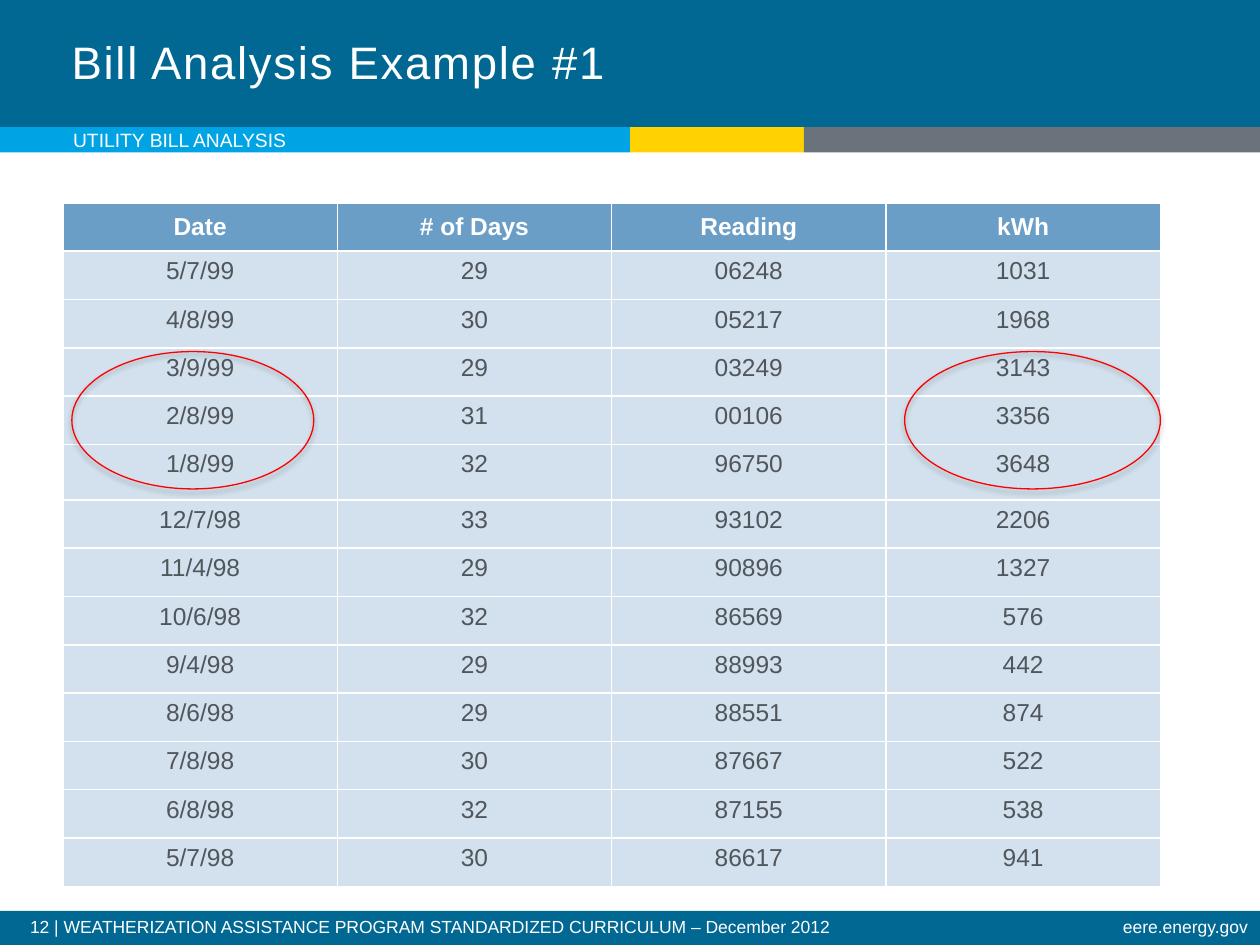
from dataclasses import dataclass

from lxml import etree
from pptx import Presentation
from pptx.dml.color import RGBColor
from pptx.enum.shapes import MSO_SHAPE
from pptx.enum.text import MSO_ANCHOR, PP_ALIGN
from pptx.oxml.ns import qn
from pptx.util import Inches, Pt

RECT, OVAL = MSO_SHAPE.RECTANGLE, MSO_SHAPE.OVAL
LEFT, CENTER, RIGHT = PP_ALIGN.LEFT, PP_ALIGN.CENTER, PP_ALIGN.RIGHT
TOP, MIDDLE = MSO_ANCHOR.TOP, MSO_ANCHOR.MIDDLE


@dataclass(frozen=True)
class Theme:
    font: str = "Arial"
    white: str = "FFFFFF"
    navy: str = "006892"
    sky: str = "00A4E4"
    yellow: str = "FFD200"
    gray: str = "6A737B"
    table: str = "6B9EC6"
    body: str = "50565C"
    mark: str = "FF0000"
    title_size: int = 26
    table_size: int = 14
    section_size: int = 11
    footer_size: int = 10


THEME = Theme()

HEADERS = ("Date", "# of Days", "Reading", "kWh")
BILLS = (
    ("5/7/99", "29", "06248", "1031"),
    ("4/8/99", "30", "05217", "1968"),
    ("3/9/99", "29", "03249", "3143"),
    ("2/8/99", "31", "00106", "3356"),
    ("1/8/99", "32", "96750", "3648"),
    ("12/7/98", "33", "93102", "2206"),
    ("11/4/98", "29", "90896", "1327"),
    ("10/6/98", "32", "86569", "576"),
    ("9/4/98", "29", "88993", "442"),
    ("8/6/98", "29", "88551", "874"),
    ("7/8/98", "30", "87667", "522"),
    ("6/8/98", "32", "87155", "538"),
    ("5/7/98", "30", "86617", "941"),
)
TALL_ROW, TALL_HEIGHT = 5, 0.44


def rgb(color):
    return RGBColor.from_string(color)


def add_child(parent, tag, **attributes):
    return etree.SubElement(parent, qn(tag), attributes)


def add_solid_color(parent, color, alpha=None):
    clr = add_child(parent, "a:srgbClr", val=color)
    if alpha is not None:
        add_child(clr, "a:alpha", val=str(alpha * 1000))


def add_run(p, text, size, color, bold=False):
    r = p.add_run()
    r.text = text
    r.font.name = THEME.font
    r.font.size = Pt(size)
    r.font.bold = bold
    r.font.color.rgb = rgb(color)
    return r


def add_bar(s, x, y, w, h, color):
    sp = s.shapes.add_shape(RECT, Inches(x), Inches(y), Inches(w), Inches(h))
    sp.shadow.inherit = False
    sp.fill.solid()
    sp.fill.fore_color.rgb = rgb(color)
    sp.line.fill.background()


def add_text(s, x, y, w, h, text, size, align=LEFT, anchor=TOP,
             spacing=None, inset=True, tracking=0):
    """Add one line of white text; tracking is in points."""
    tf = s.shapes.add_textbox(Inches(x), Inches(y), Inches(w), Inches(h)).text_frame
    tf.word_wrap = True
    tf.vertical_anchor = anchor
    if not inset:
        tf.margin_left = tf.margin_right = tf.margin_top = tf.margin_bottom = 0
    p = tf.paragraphs[0]
    p.alignment = align
    p.line_spacing = spacing
    r = add_run(p, text, size, THEME.white)
    if tracking:
        r.font._element.set("spc", str(tracking * 100))


def add_borders(cell, color, width):
    tc_pr = cell._tc.get_or_add_tcPr()
    for side in "LRTB":
        ln = add_child(tc_pr, f"a:ln{side}", w=str(Pt(width)))
        add_solid_color(add_child(ln, "a:solidFill"), color)


def fill_cell(cell, text, is_header):
    add_borders(cell, THEME.white, 1)
    cell.fill.solid()
    cell.fill.fore_color.rgb = rgb(THEME.table)
    if not is_header:
        clr = cell._tc.tcPr.find(qn("a:solidFill")).find(qn("a:srgbClr"))
        add_child(clr, "a:alpha", val="30000")
    cell.vertical_anchor = MIDDLE if is_header else TOP
    p = cell.text_frame.paragraphs[0]
    p.alignment = CENTER
    add_run(p, text, THEME.table_size, THEME.white if is_header else THEME.body, is_header)


def add_bill_table(s, x, y, w, h):
    rows = (HEADERS, *BILLS)
    table = s.shapes.add_table(len(rows), len(HEADERS), Inches(x), Inches(y),
                               Inches(w), Inches(h)).table
    for column in table.columns:
        column.width = Inches(w / len(HEADERS))
    row_height = (h - TALL_HEIGHT) / (len(rows) - 1)
    for i, values in enumerate(rows):
        table.rows[i].height = Inches(TALL_HEIGHT if i == TALL_ROW else row_height)
        for j, text in enumerate(values):
            fill_cell(table.cell(i, j), text, is_header=i == 0)


def add_highlight(s, x, y, w, h):
    """Add a red ring with a soft shadow below it."""
    sp = s.shapes.add_shape(OVAL, Inches(x), Inches(y), Inches(w), Inches(h))
    sp.fill.background()
    sp.line.color.rgb = rgb(THEME.mark)
    sp.line.width = Pt(0.75)
    sp.shadow.inherit = False
    effects = sp._element.spPr.find(qn("a:effectLst"))
    shadow = add_child(effects, "a:outerShdw", blurRad=str(Pt(3.1)), dist=str(Pt(1.8)),
                       dir=str(90 * 60000), rotWithShape="0")
    add_solid_color(shadow, "000000", alpha=35)


def main():
    prs = Presentation()
    prs.slide_width, prs.slide_height = Inches(10), Inches(7.5)
    s = prs.slides.add_slide(prs.slide_layouts[6])

    add_bar(s, 0, 0, 10, 1.01, THEME.navy)
    add_bar(s, 0, 7.23, 10, 0.27, THEME.navy)
    x = 0
    for width, color in ((5, THEME.sky), (1.38, THEME.yellow), (3.62, THEME.gray)):
        add_bar(s, x, 1.01, width, 0.2, color)
        x += width

    add_text(s, 0.14, 7.24, 7.97, 0.26,
             "12 | WEATHERIZATION ASSISTANCE PROGRAM STANDARDIZED CURRICULUM – December 2012",
             THEME.footer_size, spacing=0.9)
    add_text(s, 5.99, 7.24, 4.01, 0.26, "eere.energy.gov", THEME.footer_size,
             align=RIGHT, spacing=0.9)
    add_text(s, 0.47, 0.03, 5.92, 0.95, "Bill Analysis Example #1", THEME.title_size,
             anchor=MIDDLE, spacing=Pt(28), tracking=1)

    add_bill_table(s, 0.5, 1.61, 8.71, 5.43)
    for x, width in ((0.57, 1.92), (7.18, 2.03)):
        add_highlight(s, x, 2.79, width, 1.09)

    add_text(s, 0.58, 0.99, 6.75, 0.24, "UTILITY BILL ANALYSIS", THEME.section_size,
             anchor=MIDDLE, inset=False)
    prs.save("out.pptx")


if __name__ == "__main__":
    main()
